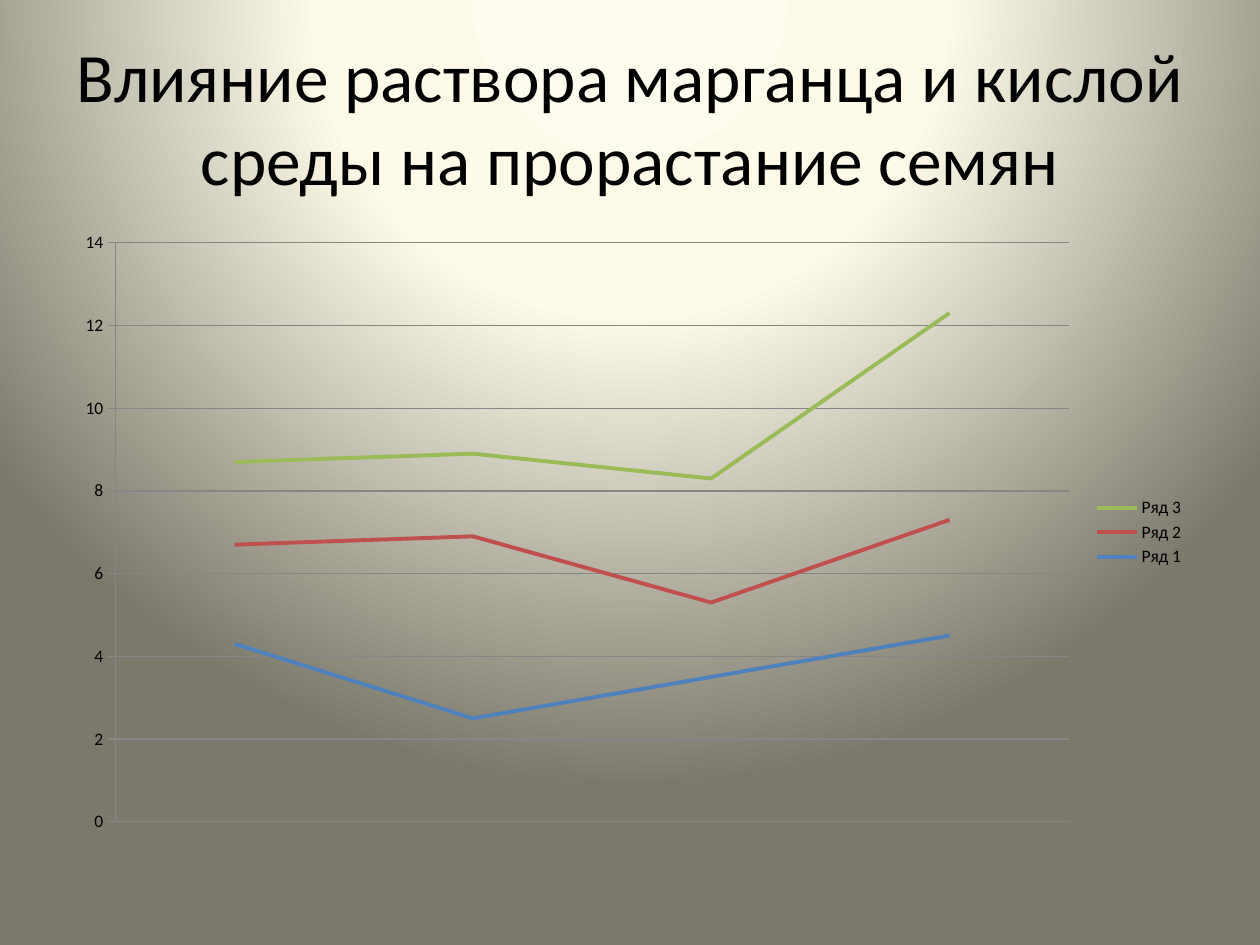
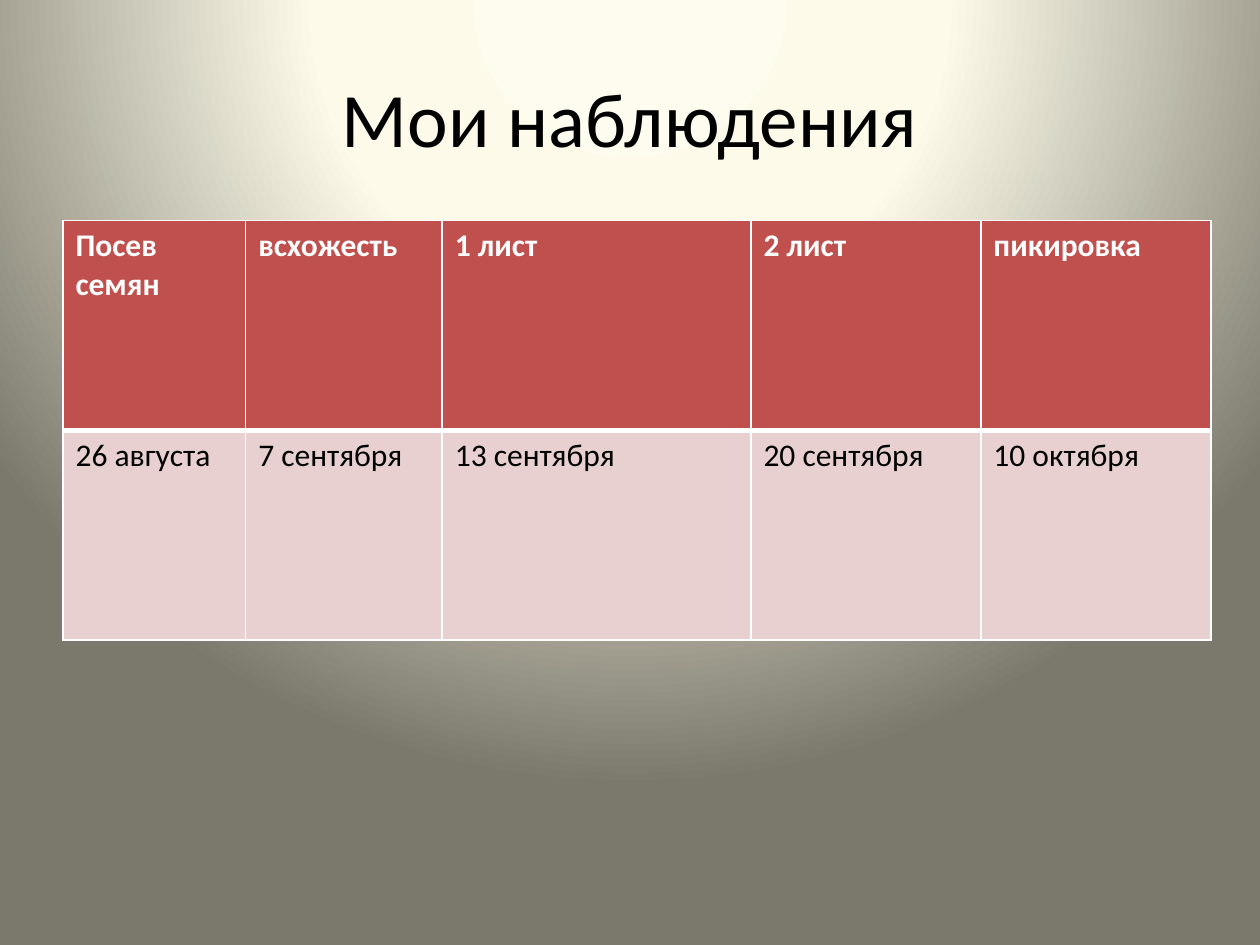
from dataclasses import dataclass

from pptx import Presentation
from pptx.chart.data import CategoryChartData
from pptx.dml.color import RGBColor
from pptx.enum.chart import XL_CHART_TYPE, XL_LEGEND_POSITION, XL_TICK_MARK
from pptx.enum.text import MSO_ANCHOR, PP_ALIGN
from pptx.oxml import parse_xml
from pptx.oxml.ns import nsdecls, qn
from pptx.util import Inches, Pt


@dataclass(frozen=True)
class Theme:
    """Colours, font and type sizes of the deck."""
    font: str = "Calibri"
    text: str = "000000"
    light: str = "FFFFFF"
    header: str = "C0504D"
    body: str = "E8D0D0"
    axis: str = "868686"
    series: tuple = ("4F81BD", "C0504D", "9BBB59")
    backdrop: tuple = ((0, "FEFCEE"), (40, "FDFAEA"), (100, "7B796B"))
    title_size: float = 44
    long_title_size: float = 39.6
    table_size: float = 18
    chart_size: float = 10


class Deck:
    """Draws elements on the current slide, on a grid of 20 columns and 30 rows."""

    def __init__(self, theme):
        self.theme = theme
        self.prs = Presentation()
        self.prs.slide_width, self.prs.slide_height = Inches(10), Inches(7.5)
        self.s = None
        self.backdrop()

    def x(self, cols):
        return int(self.prs.slide_width * cols / 20)

    def y(self, rows):
        return int(self.prs.slide_height * rows / 30)

    def box(self, left, top, width, height):
        return self.x(left), self.y(top), self.x(width), self.y(height)

    def backdrop(self):
        master = self.prs.slide_master
        master.background.fill.gradient()
        grad = next(master.element.iter(qn("a:gradFill")))
        stops = "".join(
            f'<a:gs pos="{pos * 1000}"><a:srgbClr val="{color}"/></a:gs>'
            for pos, color in self.theme.backdrop)
        grad.getparent().replace(grad, parse_xml(
            f'<a:gradFill {nsdecls("a")} rotWithShape="1"><a:gsLst>{stops}</a:gsLst>'
            '<a:path path="circle"><a:fillToRect l="50000" t="-80000" r="50000" b="180000"/>'
            '</a:path></a:gradFill>'))

    def slide(self):
        self.s = self.prs.slides.add_slide(self.prs.slide_layouts[6])

    def style(self, font, size, color, bold=False):
        font.name, font.size, font.bold = self.theme.font, Pt(size), bold
        font.color.rgb = RGBColor.from_string(color)

    def run(self, p, text, size, color, bold=False):
        r = p.add_run()
        r.text = text
        self.style(r.font, size, color, bold)

    def title(self, text, size):
        tf = self.s.shapes.add_textbox(*self.box(1, 1.2, 18, 5)).text_frame
        tf.word_wrap = True
        tf.vertical_anchor = MSO_ANCHOR.MIDDLE
        p = tf.paragraphs[0]
        p.alignment = PP_ALIGN.CENTER
        self.run(p, text, size, self.theme.text)

    def line(self, fmt, color, width):
        fmt.color.rgb = RGBColor.from_string(color)
        fmt.width = Pt(width)

    def line_chart(self, categories, series, box):
        data = CategoryChartData()
        data.categories = categories
        for name, values in series.items():
            data.add_series(name, values)
        chart = self.s.shapes.add_chart(
            XL_CHART_TYPE.LINE_STACKED, *self.box(*box), data).chart
        self.style(chart.font, self.theme.chart_size, self.theme.text)
        chart.has_title = False
        chart.has_legend = True
        chart.legend.position = XL_LEGEND_POSITION.RIGHT
        chart.legend.include_in_layout = False
        chart.category_axis.visible = False
        axis = chart.value_axis
        axis.has_major_gridlines = True
        axis.major_tick_mark = XL_TICK_MARK.CROSS
        for fmt in (axis.format.line, axis.major_gridlines.format.line):
            self.line(fmt, self.theme.axis, 0.75)
        plot = chart.plots[0]
        plot.vary_by_categories = False
        for item, color in zip(plot.series, self.theme.series):
            item.smooth = False
            self.line(item.format.line, color, 2.25)

    def borders(self, cell, bottom):
        tc_pr = cell._tc.get_or_add_tcPr()
        for side, width in zip("LRTB", (1, 1, 1, bottom)):
            tc_pr.append(parse_xml(
                f'<a:ln{side} {nsdecls("a")} w="{Pt(width)}"><a:solidFill>'
                f'<a:srgbClr val="{self.theme.light}"/></a:solidFill></a:ln{side}>'))

    def table(self, rows, widths, left, top, row_height):
        t = self.theme
        tbl = self.s.shapes.add_table(len(rows), len(widths), *self.box(
            left, top, sum(widths), row_height * len(rows))).table
        for col, width in zip(tbl.columns, widths):
            col.width = self.x(width)
        for i, row in enumerate(rows):
            head = i == 0
            for j, text in enumerate(row):
                cell = tbl.cell(i, j)
                self.borders(cell, 3 if head else 1)
                cell.fill.solid()
                cell.fill.fore_color.rgb = RGBColor.from_string(t.header if head else t.body)
                self.run(cell.text_frame.paragraphs[0], text, t.table_size,
                         t.light if head else t.text, head)


def main():
    theme = Theme()
    deck = Deck(theme)

    deck.slide()
    deck.title("Влияние раствора марганца и кислой среды на прорастание семян",
               theme.long_title_size)
    deck.line_chart(("1", "2", "3", "4"), {
        "Ряд 1": (4.3, 2.5, 3.5, 4.5),
        "Ряд 2": (2.4, 4.4, 1.8, 2.8),
        "Ряд 3": (2, 2, 3, 5),
    }, (1, 7, 18, 19.8))

    deck.slide()
    deck.title("Мои наблюдения", theme.title_size)
    deck.table((
        ("Посев семян", "всхожесть", "1 лист", "2 лист", "пикировка"),
        ("26 августа", "7 сентября", "13 сентября", "20 сентября", "10 октября"),
    ), (2.9, 3.12, 4.9, 3.65, 3.65), 1, 7, 6.66)

    deck.prs.save("out.pptx")


if __name__ == "__main__":
    main()
